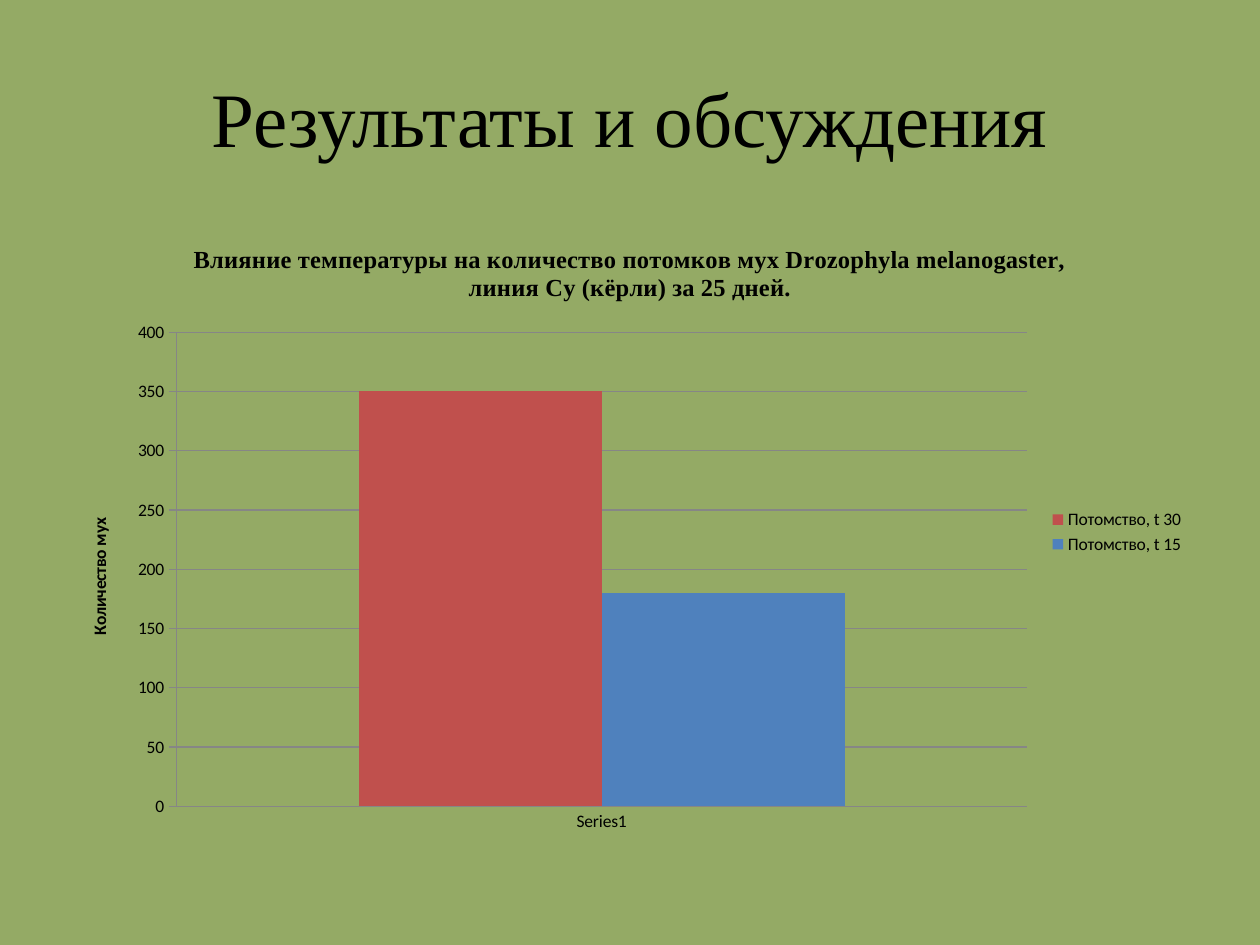
from dataclasses import dataclass

from lxml.etree import SubElement
from pptx import Presentation
from pptx.chart.data import CategoryChartData
from pptx.dml.color import RGBColor
from pptx.enum.chart import XL_CHART_TYPE, XL_LEGEND_POSITION, XL_TICK_MARK
from pptx.enum.text import MSO_ANCHOR, PP_ALIGN
from pptx.oxml.ns import qn
from pptx.util import Pt

EMU_PER_PX = 914400 / 126


@dataclass(frozen=True)
class Theme:
    background: str = "94AA65"
    ink: str = "000000"
    rule: str = "868686"
    warm: str = "C0504D"
    cool: str = "4F81BD"
    heading_face: str = "Times New Roman"
    chart_face: str = "Calibri"
    heading_size: int = 44
    chart_heading_size: int = 14
    chart_size: int = 10


THEME = Theme()
OFFSPRING = (
    ("Потомство, t 30", 350, THEME.warm),
    ("Потомство, t 15", 180, THEME.cool),
)


def px(length):
    return round(length * EMU_PER_PX)


def apply(target, formats):
    for attribute, value in formats.items():
        setattr(target, attribute, value)


def paint(fill, color):
    fill.solid()
    fill.fore_color.rgb = RGBColor.from_string(color)


def style_font(font, face, size, bold=False):
    apply(font, {"name": face, "size": Pt(size), "bold": bold})
    font.color.rgb = RGBColor.from_string(THEME.ink)


def style_rule(line):
    line.width = Pt(0.75)
    line.color.rgb = RGBColor.from_string(THEME.rule)


def write(frame, wording, face, size, bold=False):
    paragraph = frame.paragraphs[0]
    paragraph.alignment = PP_ALIGN.CENTER
    run = paragraph.add_run()
    run.text = wording
    style_font(run.font, face, size, bold)


def add_heading(slide, wording, bounds):
    frame = slide.shapes.add_textbox(*map(px, bounds)).text_frame
    apply(frame, {"word_wrap": True, "vertical_anchor": MSO_ANCHOR.MIDDLE})
    write(frame, wording, THEME.heading_face, THEME.heading_size)


def place_plot(chart, fractions):
    plot_area = chart.element.find(".//" + qn("c:plotArea"))
    layout = plot_area.find(qn("c:layout"))
    if layout is None:
        layout = SubElement(plot_area, qn("c:layout"))
        plot_area.insert(0, layout)
    manual = SubElement(layout, qn("c:manualLayout"))
    settings = {"layoutTarget": "inner", "xMode": "edge", "yMode": "edge"}
    for tag, value in (settings | fractions).items():
        SubElement(manual, qn(f"c:{tag}")).set("val", str(value))


def style_axes(chart, value_heading):
    counts, groups = chart.value_axis, chart.category_axis
    apply(counts, {
        "minimum_scale": 0, "maximum_scale": 400, "major_unit": 50,
        "has_major_gridlines": True, "major_tick_mark": XL_TICK_MARK.OUTSIDE,
    })
    apply(groups, {"major_tick_mark": XL_TICK_MARK.NONE})
    for rule in (counts.format.line, groups.format.line,
                 counts.major_gridlines.format.line):
        style_rule(rule)
    write(counts.axis_title.text_frame, value_heading,
          THEME.chart_face, THEME.chart_size, True)


def add_offspring_chart(slide, heading, value_heading, bounds):
    offspring = CategoryChartData()
    offspring.categories = ["Series1"]
    for name, flies, _ in OFFSPRING:
        offspring.add_series(name, [flies])
    chart = slide.shapes.add_chart(
        XL_CHART_TYPE.COLUMN_CLUSTERED, *map(px, bounds), offspring).chart
    style_font(chart.font, THEME.chart_face, THEME.chart_size)
    apply(chart, {"has_title": True, "has_legend": True})
    write(chart.chart_title.text_frame, heading,
          THEME.heading_face, THEME.chart_heading_size, True)
    apply(chart.chart_title, {"include_in_layout": False})
    apply(chart.legend, {
        "position": XL_LEGEND_POSITION.RIGHT, "include_in_layout": False})
    columns = chart.plots[0]
    apply(columns, {"gap_width": 150, "overlap": 0, "vary_by_categories": False})
    for series, (_, _, color) in zip(columns.series, OFFSPRING):
        paint(series.format.fill, color)
    style_axes(chart, value_heading)
    place_plot(chart, {"x": 0.1, "y": 0.18, "w": 0.75, "h": 0.76})


def main():
    deck = Presentation()
    apply(deck, {"slide_width": px(1260), "slide_height": px(945)})
    slide = deck.slides.add_slide(deck.slide_layouts[6])
    paint(slide.background.fill, THEME.background)
    add_heading(slide, "Результаты и обсуждения", (63, 38, 1134, 158))
    add_offspring_chart(
        slide,
        "Влияние температуры на количество потомков мух "
        "Drozophyla melanogaster, линия Су (кёрли) за 25 дней.",
        "Количество мух",
        (63, 220, 1134, 624))
    deck.save("out.pptx")


if __name__ == "__main__":
    main()
